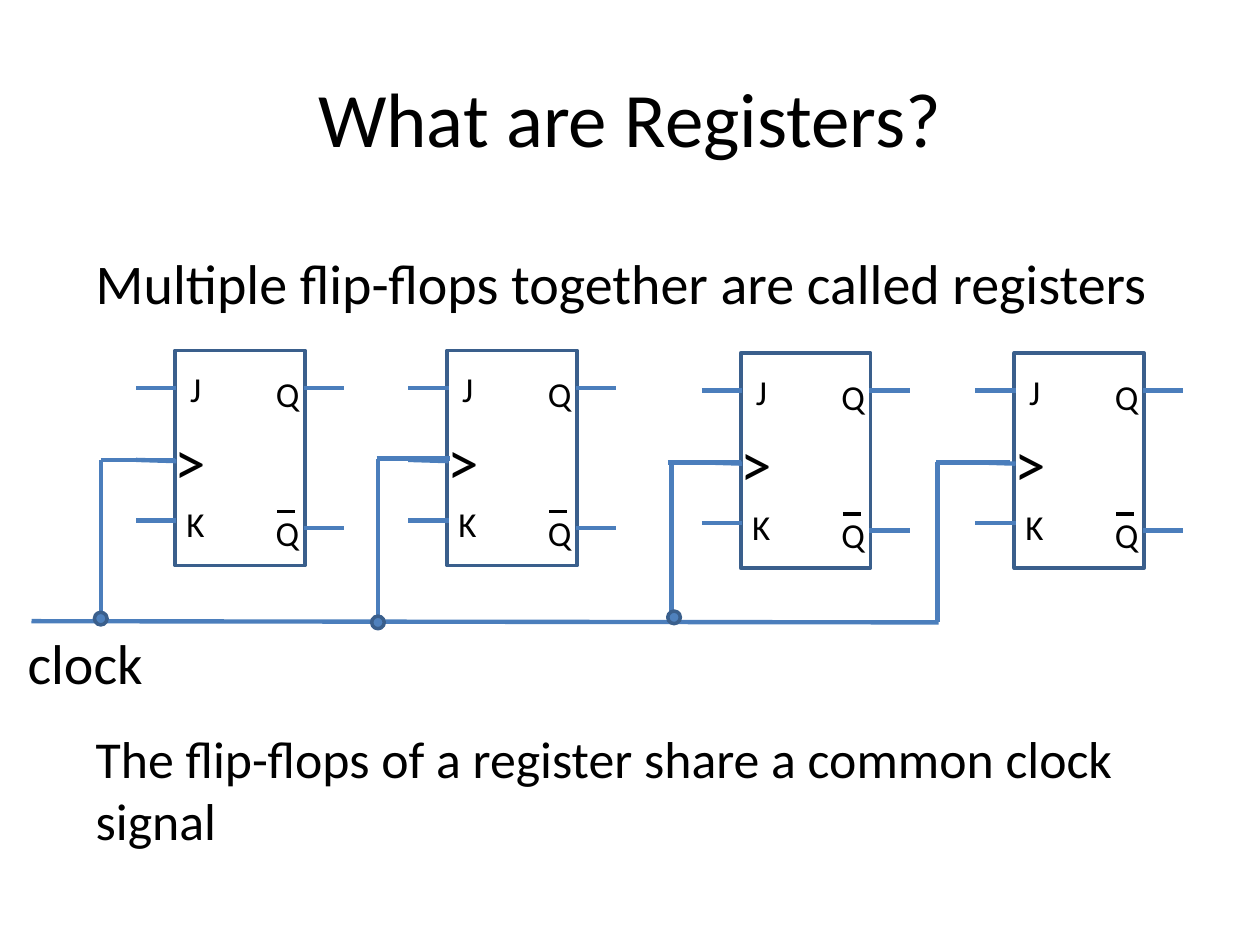
from lxml.etree import SubElement
from pptx import Presentation
from pptx.dml.color import RGBColor
from pptx.enum.shapes import MSO_CONNECTOR as Connector, MSO_SHAPE as Preset
from pptx.enum.text import MSO_ANCHOR as Anchor, MSO_AUTO_SIZE as AutoSize, PP_ALIGN as Align
from pptx.oxml.ns import qn
from pptx.util import Inches, Pt

COLUMNS, ROWS = 100, 75
WIRE, EDGE, DOT, BLACK, WHITE = "4B7EBC", "3A5F8C", "4F81BD", "000000", "FFFFFF"


def color(hex_string):
    return RGBColor.from_string(hex_string)


class RegisterSlide:
    font = "Calibri"

    def __init__(self, presentation, layout_name):
        self.width, self.height = presentation.slide_width, presentation.slide_height
        layout = presentation.slide_layouts.get_by_name(layout_name)
        self.slide = presentation.slides.add_slide(layout)
        self.start_group()

    def start_group(self, left=0, top=0):
        self.shapes = None
        self.left, self.top = left, top

    def container(self):
        if self.shapes is None:
            self.shapes = self.slide.shapes.add_group_shape().shapes
        return self.shapes

    def across(self, columns):
        return round(self.width * columns / COLUMNS)

    def down(self, rows):
        return round(self.height * rows / ROWS)

    def box(self, left, top, width, height):
        return (self.across(self.left + left), self.down(self.top + top),
                self.across(width), self.down(height))

    def add_text(self, frame, text, size, align):
        paragraph = frame.paragraphs[0]
        paragraph.alignment = align
        run = paragraph.add_run()
        run.text = text
        run.font.name = self.font
        run.font.size = Pt(size)
        run.font.color.rgb = color(BLACK)
        return paragraph

    def placeholder(self, index, text, size, box, align=Align.LEFT, anchor=Anchor.TOP):
        shape = self.slide.placeholders[index]
        shape.left, shape.top, shape.width, shape.height = self.box(*box)
        frame = shape.text_frame
        frame.auto_size = AutoSize.NONE
        frame.vertical_anchor = anchor
        paragraph = self.add_text(frame, text, size, align)
        properties = paragraph._p.get_or_add_pPr()
        properties.set("marL", "0")
        properties.set("indent", "0")
        SubElement(properties, qn("a:buNone"))

    def label(self, text, size, box, auto_size=AutoSize.SHAPE_TO_FIT_TEXT, before=0):
        frame = self.container().add_textbox(*self.box(*box)).text_frame
        frame.word_wrap = True
        frame.auto_size = auto_size
        self.add_text(frame, text, size, Align.LEFT).space_before = Pt(before)

    def shape(self, preset, fill, box):
        shape = self.container().add_shape(preset, *self.box(*box))
        shape.shadow.inherit = False
        shape.fill.solid()
        shape.fill.fore_color.rgb = color(fill)
        shape.line.color.rgb = color(EDGE)
        shape.line.width = Pt(2)

    def line(self, x1, y1, x2, y2, width=2.5, stroke=WIRE):
        start = self.box(x1, y1, 0, 0)[:2]
        end = self.box(x2, y2, 0, 0)[:2]
        connector = self.container().add_connector(Connector.STRAIGHT, *start, *end)
        connector.line.color.rgb = color(stroke)
        connector.line.width = Pt(width)
        SubElement(connector._element.spPr, qn("a:effectLst"))

    def flip_flop(self, left, top):
        self.start_group(left, top)
        self.shape(Preset.RECTANGLE, WHITE, (0, 0, 10.3, 17.1))
        self.label("J", 20, (0.2, 0.9, 2.8, 3))
        self.label(">", 36, (-1, 5.2, 5, 4.9))
        self.label("Q", 20, (7, 1.3, 2.8, 2.9))
        for start, row in ((10.3, 2.9), (10.3, 14.1), (-1.7, 3), (-1.7, 13.6)):
            self.line(start, row, start + 1.7, row, width=0.75)
        self.label("Q", 20, (7, 12.3, 2.7, 2.9))
        self.line(8.1, 12.8, 9.5, 12.8, width=2, stroke=BLACK)
        for start, row in ((-3.1, 3), (-3.1, 13.5), (10.2, 14.1), (10.2, 3)):
            self.line(start, row, start + 3.2, row)
        self.line(-3.1, 8.7, 0.1, 8.8)
        self.label("K", 20, (-0.1, 11.6, 2.8, 3))

    def clock_bus(self):
        self.start_group()
        self.line(2.5, 49.3, 74.5, 49.4)
        for column, start, end, row in ((30, 29.9, 35.7, 36.4), (8, 8, 13.9, 36.5),
                                        (53.3, 53, 58.8, 36.7), (74.4, 74.3, 80.2, 36.7)):
            self.line(column, 49.4, column, row)
            self.line(start, row, end, row)
        for left, top in ((7.5, 48.6), (53, 48.5), (29.5, 48.9)):
            self.shape(Preset.OVAL, DOT, (left, top, 1, 1))
        self.label("clock", 32, (1.2, 49.4, 12.5, 6.2), AutoSize.NONE, before=6.4)


def main():
    presentation = Presentation()
    presentation.slide_width, presentation.slide_height = Inches(10), Inches(7.5)
    register = RegisterSlide(presentation, "Two Content")
    register.placeholder(0, "What are Registers?", 44, (5, 3, 90, 12.5),
                         Align.CENTER, Anchor.MIDDLE)
    register.placeholder(1, "Multiple flip-flops together are called registers", 32,
                         (6.6, 19.2, 90, 6.7))
    register.placeholder(2, "The flip-flops of a register share a common clock signal", 29.6,
                         (6.6, 57.2, 90, 11))
    for left, top in ((13.9, 27.8), (35.5, 27.8), (58.8, 28), (80.5, 28)):
        register.flip_flop(left, top)
    register.clock_bus()
    presentation.save("out.pptx")


if __name__ == "__main__":
    main()
